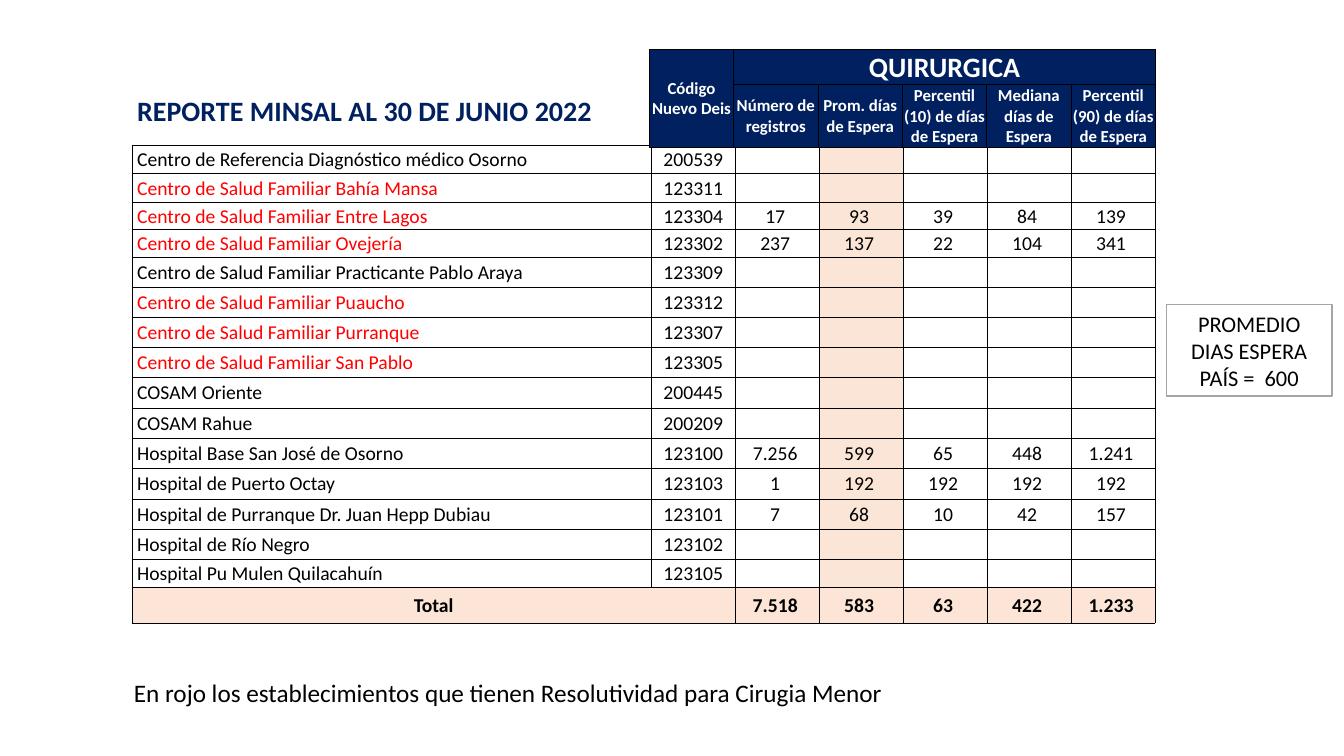
from lxml import etree
from pptx import Presentation
from pptx.dml.color import RGBColor
from pptx.enum import shapes, text
from pptx.oxml.ns import qn
from pptx.util import Inches, Pt

NAVY = RGBColor(0x00, 0x20, 0x60)
RED = RGBColor(0xFF, 0x00, 0x00)
BLACK = RGBColor(0x00, 0x00, 0x00)
WHITE = RGBColor(0xFF, 0xFF, 0xFF)
GREY = RGBColor(0xA5, 0xA5, 0xA5)
PEACH = RGBColor(0xFB, 0xE5, 0xD6)
TOTAL_PEACH = RGBColor(0xFC, 0xE4, 0xD6)
LEFT, CENTER = text.PP_ALIGN.LEFT, text.PP_ALIGN.CENTER
FONT = "Calibri"

HEADINGS = ["Número de registros", "Prom. días de Espera", "Percentil (10) de días de Espera",
            "Mediana días de Espera", "Percentil (90) de días de Espera"]
AVERAGE_COLUMN = 3

# name, code, has minor surgery, row height, values
CENTERS = [
    ("Centro de Referencia Diagnóstico médico Osorno", "200539", False, 0.28, ""),
    ("Centro de Salud Familiar Bahía Mansa", "123311", True, 0.29, ""),
    ("Centro de Salud Familiar Entre Lagos", "123304", True, 0.27, "17 93 39 84 139"),
    ("Centro de Salud Familiar Ovejería", "123302", True, 0.27, "237 137 22 104 341"),
    ("Centro de Salud Familiar Practicante Pablo Araya", "123309", False, 0.3, ""),
    ("Centro de Salud Familiar Puaucho", "123312", True, 0.3, ""),
    ("Centro de Salud Familiar Purranque", "123307", True, 0.3, ""),
    ("Centro de Salud Familiar San Pablo", "123305", True, 0.29, ""),
    ("COSAM Oriente", "200445", False, 0.31, ""),
    ("COSAM Rahue", "200209", False, 0.3, ""),
    ("Hospital Base San José de Osorno", "123100", False, 0.3, "7.256 599 65 448 1.241"),
    ("Hospital de Puerto Octay", "123103", False, 0.3, "1 192 192 192 192"),
    ("Hospital de Purranque Dr. Juan Hepp Dubiau", "123101", False, 0.3, "7 68 10 42 157"),
    ("Hospital de Río Negro", "123102", False, 0.3, ""),
    ("Hospital Pu Mulen Quilacahuín", "123105", False, 0.28, ""),
]
TOTALS = "7.518 583 63 422 1.233"
TOTAL_HEIGHT = 0.35


def write(frame, words, size=14, color=BLACK, bold=False, align=LEFT):
    frame.word_wrap = True
    paragraph = frame.paragraphs[0]
    paragraph.alignment = align
    paragraph.line_spacing = 1.0
    if not words:
        # An empty cell keeps the row low only if its end mark has the size too.
        etree.SubElement(paragraph._p, qn("a:endParaRPr"), sz=str(size * 100))
        return
    run = paragraph.add_run()
    run.text = words
    run.font.name = FONT
    run.font.size = Pt(size)
    run.font.bold = bold
    run.font.color.rgb = color


def format_cell(cell, words, fill=None, left=0.01, right=0.01, align=CENTER, **style):
    cell.margin_left, cell.margin_right = Inches(left), Inches(right)
    cell.margin_top, cell.margin_bottom = Inches(0.01), 0
    cell.vertical_anchor = text.MSO_ANCHOR.MIDDLE
    properties = cell._tc.get_or_add_tcPr()
    for side in ("lnL", "lnR", "lnT", "lnB"):
        line = etree.SubElement(properties, qn(f"a:{side}"), w=str(Pt(0.5)))
        solid = etree.SubElement(line, qn("a:solidFill"))
        etree.SubElement(solid, qn("a:srgbClr"), val=str(BLACK))
    if fill is None:
        cell.fill.background()
    else:
        cell.fill.solid()
        cell.fill.fore_color.rgb = fill
    write(cell.text_frame, words, align=align, **style)


def add_grid(slide, left, top, widths, heights):
    """Add a table without style bands, with the given column widths and row heights."""
    frame = slide.shapes.add_table(len(heights), len(widths), Inches(left), Inches(top),
                                   Inches(sum(widths)), Inches(sum(heights)))
    table = frame.table
    table.first_row = table.horz_banding = False
    for column, width in zip(table.columns, widths):
        column.width = Inches(width)
    for row, height in zip(table.rows, heights):
        row.height = Inches(height)
    return table


def add_center_table(slide, left, top):
    heights = [center[3] for center in CENTERS] + [TOTAL_HEIGHT]
    table = add_grid(slide, left, top, [5.15] + [0.833] * 6, heights)
    for row, (name, code, minor_surgery, _, values) in enumerate(CENTERS):
        format_cell(table.cell(row, 0), name, left=0.05, align=LEFT,
                    color=RED if minor_surgery else BLACK)
        format_cell(table.cell(row, 1), code)
        for column, value in enumerate(values.split() or [""] * 5, start=2):
            format_cell(table.cell(row, column), value, right=0.05,
                        fill=PEACH if column == AVERAGE_COLUMN else None)
    last = len(CENTERS)
    table.cell(last, 0).merge(table.cell(last, 1))
    for column, value in enumerate(["Total", ""] + TOTALS.split()):
        format_cell(table.cell(last, column), value, fill=TOTAL_PEACH, bold=True,
                    right=0.05 if column > 1 else 0.01)


def add_header_table(slide, left, top):
    table = add_grid(slide, left, top, [0.837] * 6, [0.35, 0.6])
    table.cell(0, 0).merge(table.cell(1, 0))
    table.cell(0, 1).merge(table.cell(0, 5))
    rows = [["Código Nuevo Deis", "QUIRURGICA", "", "", "", ""], [""] + HEADINGS]
    for row, words in enumerate(rows):
        for column, heading in enumerate(words):
            format_cell(table.cell(row, column), heading, fill=NAVY, color=WHITE, bold=True,
                        size=20 if heading == "QUIRURGICA" else 12)


def add_title(slide, left, top, width, height):
    title = slide.shapes.title
    title.left, title.top = Inches(left), Inches(top)
    title.width, title.height = Inches(width), Inches(height)
    title.text_frame.auto_size = text.MSO_AUTO_SIZE.NONE
    title.text_frame.vertical_anchor = text.MSO_ANCHOR.TOP
    write(title.text_frame, "REPORTE MINSAL AL 30 DE JUNIO 2022", size=20, color=NAVY, bold=True)


def add_country_average(slide, left, top, width, height):
    box = slide.shapes.add_shape(shapes.MSO_SHAPE.RECTANGLE, Inches(left), Inches(top),
                                 Inches(width), Inches(height))
    box.shadow.inherit = False
    box.fill.solid()
    box.fill.fore_color.rgb = WHITE
    box.line.color.rgb = GREY
    box.line.width = Pt(1)
    write(box.text_frame, "PROMEDIO DIAS ESPERA PAÍS =  600", size=16, align=CENTER)


def add_note(slide, left, top, width, height):
    note = slide.shapes.add_textbox(Inches(left), Inches(top), Inches(width), Inches(height))
    write(note.text_frame,
          "En rojo los establecimientos que tienen Resolutividad para Cirugia Menor", size=18)


def main():
    presentation = Presentation()
    presentation.slide_width, presentation.slide_height = Inches(13.33), Inches(7.5)
    slide = presentation.slides.add_slide(presentation.slide_layouts[5])
    add_center_table(slide, 1.31, 1.44)
    add_header_table(slide, 6.44, 0.49)
    add_title(slide, 1.26, 0.88, 5.13, 0.44)
    add_country_average(slide, 11.57, 3.02, 1.64, 0.91)
    add_note(slide, 1.23, 6.67, 8.6, 0.4)
    presentation.save("out.pptx")


if __name__ == "__main__":
    main()
